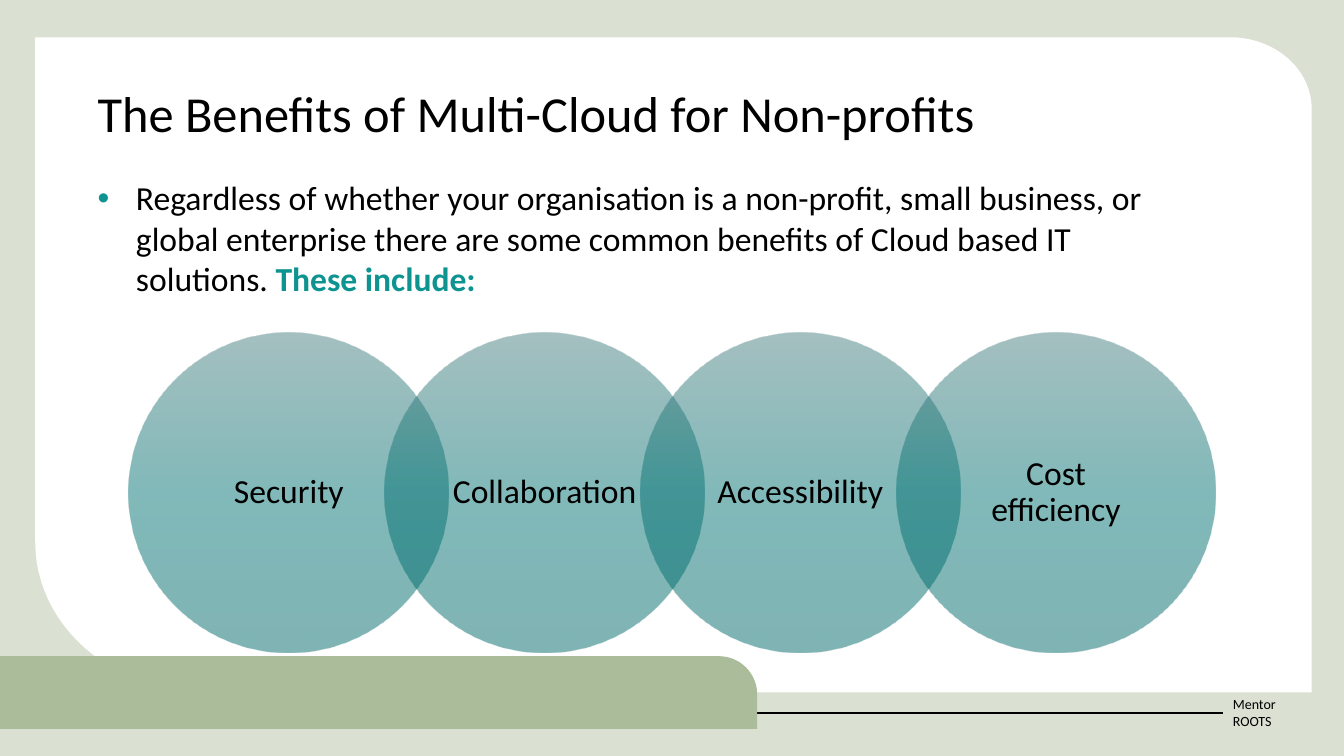
from math import cos, pi, sin, sqrt

from lxml.etree import SubElement
from pptx import Presentation
from pptx.dml.color import RGBColor
from pptx.enum.shapes import MSO_CONNECTOR, MSO_SHAPE
from pptx.enum.text import MSO_ANCHOR, PP_ALIGN
from pptx.oxml.ns import qn
from pptx.util import Inches, Pt

BLACK = RGBColor(0x00, 0x00, 0x00)
WHITE = RGBColor(0xFF, 0xFF, 0xFF)
PALE_GREEN = RGBColor(0xDA, 0xE0, 0xD2)
SAGE = RGBColor(0xAA, 0xBC, 0x99)
TEAL = RGBColor(0x0D, 0x93, 0x90)
CIRCLE_STOPS = [(0, RGBColor(0x4B, 0x80, 0x81)),
                (50, RGBColor(0x03, 0x72, 0x73)),
                (100, RGBColor(0x00, 0x68, 0x69))]
BENEFITS = ["Security", "Collaboration", "Accessibility", "Cost efficiency"]


def paint(sp, color):
    """Give a shape a plain fill with no outline or shadow."""
    sp.shadow.inherit = False
    sp.fill.solid()
    sp.fill.fore_color.rgb = color
    sp.line.fill.background()


def add_run(p, text, size, color=BLACK, bold=False):
    """Add one formatted run to a paragraph."""
    r = p.add_run()
    r.text = text
    r.font.name = "Calibri"
    r.font.size = Pt(size)
    r.font.bold = bold
    r.font.color.rgb = color


def add_text(s, x, y, w, h, anchor=MSO_ANCHOR.TOP):
    """Add a wrapping text box and return it with its first paragraph."""
    sp = s.shapes.add_textbox(Inches(x), Inches(y), Inches(w), Inches(h))
    tf = sp.text_frame
    tf.word_wrap = True
    tf.vertical_anchor = anchor
    return sp, tf.paragraphs[0]


def arc(cx, cy, rx, ry, start):
    """Return the points of a clockwise quarter ellipse."""
    angles = [start + pi / 2 * i / 24 for i in range(25)]
    return [(cx + rx * cos(a), cy + ry * sin(a)) for a in angles]


def add_outline(s, points, color):
    """Add a closed filled outline through points in inches."""
    scaled = [(Inches(x), Inches(y)) for x, y in points]
    fb = s.shapes.build_freeform(*scaled[0])
    fb.add_line_segments(scaled[1:], close=True)
    paint(fb.convert_to_shape(), color)


def add_panel(s, x, y, w, h):
    """Draw the white panel, rounded at top right and bottom left."""
    right, bottom = x + w, y + h
    points = [(x, y)]
    points += arc(right - 0.81, y + 0.71, 0.81, 0.71, -pi / 2)
    points += [(right, bottom)]
    points += arc(x + 1.7, bottom - 1.49, 1.7, 1.49, pi / 2)
    add_outline(s, points, WHITE)


def add_footer(s, x, y, w, h):
    """Draw the footer name, its rule and the sage tab."""
    name, p = add_text(s, x + w - 1.01, y + 0.36, 1.01, 0.4, MSO_ANCHOR.MIDDLE)
    add_run(p, "Mentor ROOTS", 10)
    rule = s.shapes.add_connector(MSO_CONNECTOR.STRAIGHT, Inches(x), Inches(y + 0.56),
                                  name.left, Inches(y + 0.56))
    rule.end_connect(name, 1)
    rule.line.color.rgb = BLACK
    rule.line.width = Pt(1.5)
    SubElement(rule._element.spPr, qn("a:effectLst"))
    right, bottom, radius = x + 7.51, y + h, 0.38
    tab = [(x, bottom), (x, y)]
    tab += arc(right - radius, y + radius, radius, radius, -pi / 2)
    add_outline(s, tab + [(right, bottom)], SAGE)


def add_title(s, x, y, w, h):
    """Write the slide title."""
    p = add_text(s, x, y, w, h)[1]
    p.line_spacing = 0.9
    add_run(p, "The Benefits of Multi-Cloud for Non-profits", 36)


def add_intro(s, x, y, w, h):
    """Write the bulleted introduction."""
    p = add_text(s, x, y, w, h)[1]
    pPr = p._p.get_or_add_pPr()
    pPr.set("marL", str(Inches(0.38)))
    pPr.set("indent", str(-Inches(0.38)))
    SubElement(SubElement(pPr, qn("a:buClr")), qn("a:srgbClr"), val=str(TEAL))
    SubElement(pPr, qn("a:buFont"), typeface="Arial")
    SubElement(pPr, qn("a:buChar"), char="•")
    add_run(p, "Regardless of whether your organisation is a non-profit, small "
               "business, or global enterprise there are some common benefits of "
               "Cloud based IT solutions. ", 24)
    add_run(p, "These include:", 24, TEAL, True)


def add_circle(s, x, y, d, label):
    """Draw one translucent circle with its centred label."""
    sp = s.shapes.add_shape(MSO_SHAPE.OVAL, Inches(x), Inches(y), Inches(d), Inches(d))
    sp.shadow.inherit = False
    sp.line.fill.background()
    sp.fill.gradient()
    sp.fill.gradient_angle = 270
    stops = sp._element.spPr.find(".//" + qn("a:gsLst"))
    for gs in list(stops):
        stops.remove(gs)
    for pos, color in CIRCLE_STOPS:
        gs = SubElement(stops, qn("a:gs"), pos=str(pos * 1000))
        clr = SubElement(gs, qn("a:srgbClr"), val=str(color))
        SubElement(clr, qn("a:alpha"), val="50000")
    side = d / sqrt(2)
    inset = (d - side) / 2
    box, p = add_text(s, x + inset, y + inset, side, side, MSO_ANCHOR.MIDDLE)
    tf = box.text_frame
    tf.margin_left = tf.margin_right = Inches(0.17)
    tf.margin_top = tf.margin_bottom = Inches(0.03)
    p.alignment = PP_ALIGN.CENTER
    p.line_spacing = 0.9
    add_run(p, label, 24)


def add_benefits(s, x, y, d):
    """Draw the chain of circles, each overlapping the last by a fifth."""
    for i, label in enumerate(BENEFITS):
        add_circle(s, x + i * d * 0.8, y, d, label)


def main():
    """Build and save the slide."""
    prs = Presentation()
    prs.slide_width, prs.slide_height = Inches(13.33), Inches(7.5)
    s = prs.slides.add_slide(prs.slide_layouts[6])
    backdrop = s.shapes.add_shape(MSO_SHAPE.RECTANGLE, 0, 0,
                                  prs.slide_width, prs.slide_height)
    paint(backdrop, PALE_GREEN)
    add_panel(s, 0.35, 0.37, 12.66, 6.5)
    add_footer(s, 0, 6.51, 13.14, 0.72)
    add_title(s, 0.87, 0.83, 11.59, 0.88)
    add_intro(s, 0.87, 1.71, 11.22, 1.31)
    add_benefits(s, 1.28, 3.3, 3.17)
    prs.save("out.pptx")


if __name__ == "__main__":
    main()
